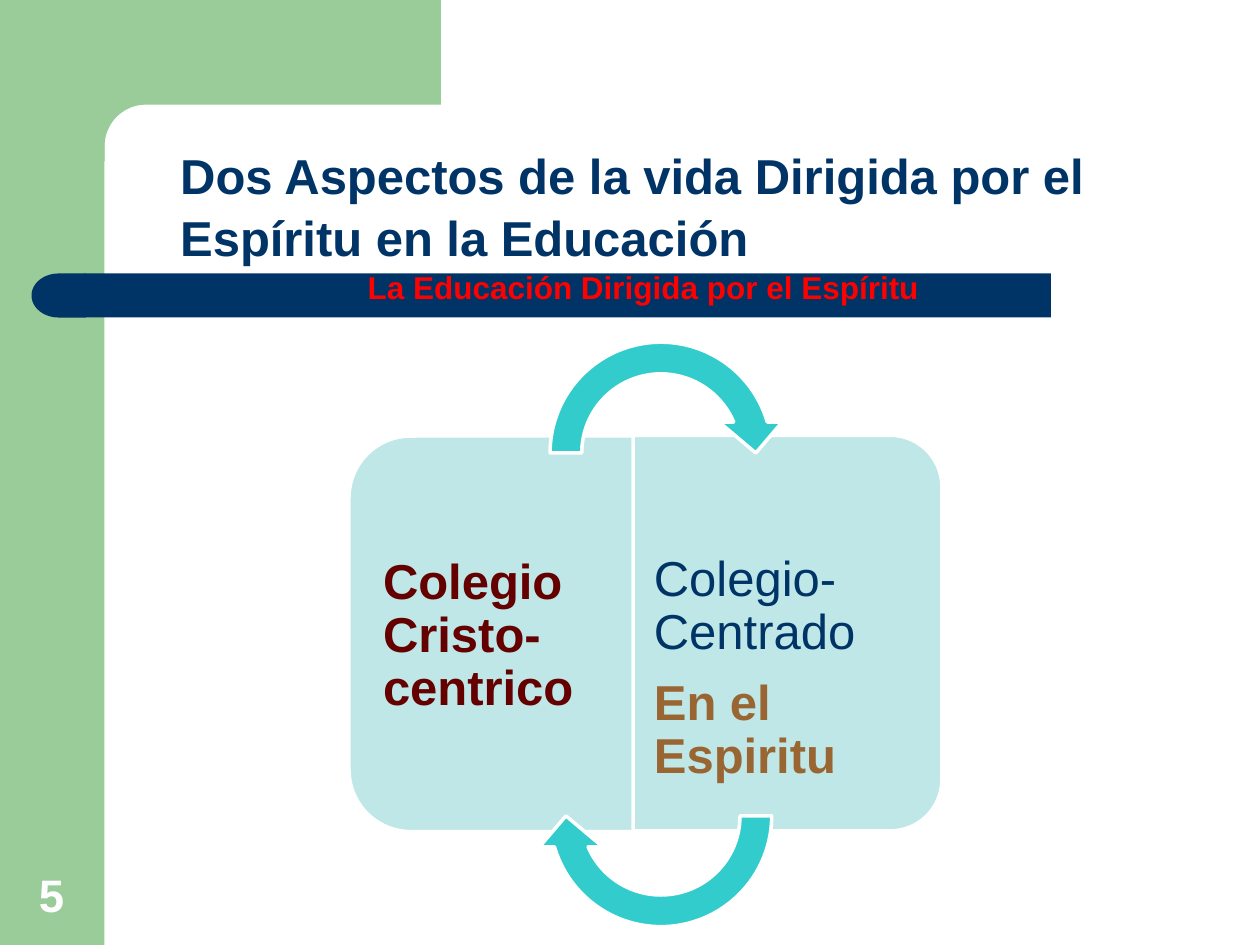
import math
from typing import NamedTuple

from pptx import Presentation
from pptx.dml.color import RGBColor
from pptx.enum import shapes, text
from pptx.util import Inches, Pt

NAVY, GREEN, WHITE, RED = "003366", "99CC99", "FFFFFF", "FF0000"
TEAL, PALE_TEAL, MAROON, BROWN = "33CCCC", "BFE7E7", "640000", "996633"
KIND = shapes.MSO_SHAPE


class Box(NamedTuple):
    left: float
    top: float
    width: float
    height: float


class Block(NamedTuple):
    kind: shapes.MSO_SHAPE
    box: Box
    fill: str
    rotation: int = 0
    adjustments: tuple[float, ...] = ()
    outlined: bool = False


class Line(NamedTuple):
    words: str
    size: int
    colour: str
    bold: bool = True


class Label(NamedTuple):
    box: Box
    lines: tuple[Line, ...]
    insets: tuple[float, float, float, float] = (0.1, 0.05, 0.1, 0.05)
    wrap: bool = True
    anchor: text.MSO_ANCHOR = text.MSO_ANCHOR.TOP
    align: text.PP_ALIGN = text.PP_ALIGN.LEFT
    spacing: float = 1.0
    gap: int = 0


ARROW = (0.125, 11.42, 204.58, 108, 0.125)
PANEL = (0.167, 0)

BACKGROUND = (
    Block(KIND.RECTANGLE, Box(0, 0, 0.83, 7.5), GREEN),
    Block(KIND.RECTANGLE, Box(0.67, 2.17, 7.67, 0.35), NAVY),
    Block(KIND.FLOWCHART_DELAY, Box(0.25, 2.17, 0.43, 0.35), NAVY, 180),
)
CYCLE = (
    Block(KIND.ROUND_2_SAME_RECTANGLE, Box(2.67, 3.56, 3.14, 2.94), PALE_TEAL, 270, PANEL, True),
    Block(KIND.ROUND_2_SAME_RECTANGLE, Box(4.68, 3.8, 3.14, 2.45), PALE_TEAL, 90, PANEL, True),
    Block(KIND.CIRCULAR_ARROW, Box(4.24, 2.59, 2.01, 2.01), TEAL, 0, ARROW, True),
    Block(KIND.CIRCULAR_ARROW, Box(4.24, 5.47, 2.01, 2.01), TEAL, 180, ARROW, True),
)
LABELS = (
    Label(Box(2.82, 2.08, 4.62, 0.71),
          (Line("La Educación Dirigida por el Espíritu", 18, RED),), wrap=False),
    Label(Box(2.92, 3.6, 2.8, 2.86), (Line("Colegio Cristo-centrico", 28, MAROON),),
          (0.12, 0.82, 0.17, 0.19), spacing=0.9, gap=10),
    Label(Box(5.02, 3.58, 2.33, 2.9),
          (Line("Colegio-Centrado", 28, NAVY, False), Line("En el Espiritu", 28, BROWN)),
          (0.17, 0.82, 0.12, 0.19), spacing=0.9, gap=10),
    Label(Box(0.09, 6.83, 0.64, 0.53), (Line("5", 26, WHITE),),
          anchor=text.MSO_ANCHOR.BOTTOM, align=text.PP_ALIGN.CENTER),
)
TITLE = Label(
    Box(1.33, 1.08, 8.25, 1.35),
    (Line("Dos Aspectos de la vida Dirigida por el Espíritu en la Educación", 28, NAVY),),
    spacing=1.05,
)


def paint(target, colour: str) -> None:
    """Give a fill a solid colour."""
    target.solid()
    target.fore_color.rgb = RGBColor.from_string(colour)


def style(shape, colour: str, outlined: bool = False) -> None:
    shape.shadow.inherit = False
    paint(shape.fill, colour)
    if outlined:
        paint(shape.line.fill, WHITE)
        shape.line.width = Pt(2)
    else:
        shape.line.fill.background()


def draw_block(slide, block: Block) -> None:
    shape = slide.shapes.add_shape(block.kind, *map(Inches, block.box))
    shape.rotation = block.rotation
    for index, value in enumerate(block.adjustments):
        shape.adjustments[index] = value
    style(shape, block.fill, block.outlined)


def draw_corner(slide) -> None:
    """Draw the top band, whose inner corner is rounded."""
    centre, radius = 1.16, 0.33
    angles = [math.radians(270 - step * 7.5) for step in range(13)]
    arc = [(centre + radius * math.cos(a), centre + radius * math.sin(a)) for a in angles]
    points = [(3.5, 0.83), *arc, (0.83, 1.28), (0.5, 1.28), (0.5, 0)]
    builder = slide.shapes.build_freeform(Inches(3.5), 0, scale=1.0)
    builder.add_line_segments([(Inches(x), Inches(y)) for x, y in points], close=True)
    style(builder.convert_to_shape(), GREEN)


def write(shape, label: Label) -> None:
    frame = shape.text_frame
    frame.word_wrap = label.wrap
    frame.auto_size = text.MSO_AUTO_SIZE.NONE
    frame.vertical_anchor = label.anchor
    (frame.margin_left, frame.margin_top,
     frame.margin_right, frame.margin_bottom) = map(Inches, label.insets)
    for index, line in enumerate(label.lines):
        para = frame.add_paragraph() if index else frame.paragraphs[0]
        para.alignment = label.align
        para.line_spacing = label.spacing
        para.space_before = Pt(0)
        para.space_after = Pt(label.gap)
        span = para.add_run()
        span.text = line.words
        span.font.name = "Arial"
        span.font.size = Pt(line.size)
        span.font.bold = line.bold
        span.font.color.rgb = RGBColor.from_string(line.colour)


def main() -> None:
    deck = Presentation()
    deck.slide_width, deck.slide_height = Inches(10), Inches(7.5)
    slide = deck.slides.add_slide(deck.slide_layouts.get_by_name("Title Only"))

    title = slide.shapes.title
    title.left, title.top, title.width, title.height = map(Inches, TITLE.box)
    write(title, TITLE)

    draw_corner(slide)
    for block in BACKGROUND + CYCLE:
        draw_block(slide, block)
    for label in LABELS:
        write(slide.shapes.add_textbox(*map(Inches, label.box)), label)
    deck.save("out.pptx")


if __name__ == "__main__":
    main()
